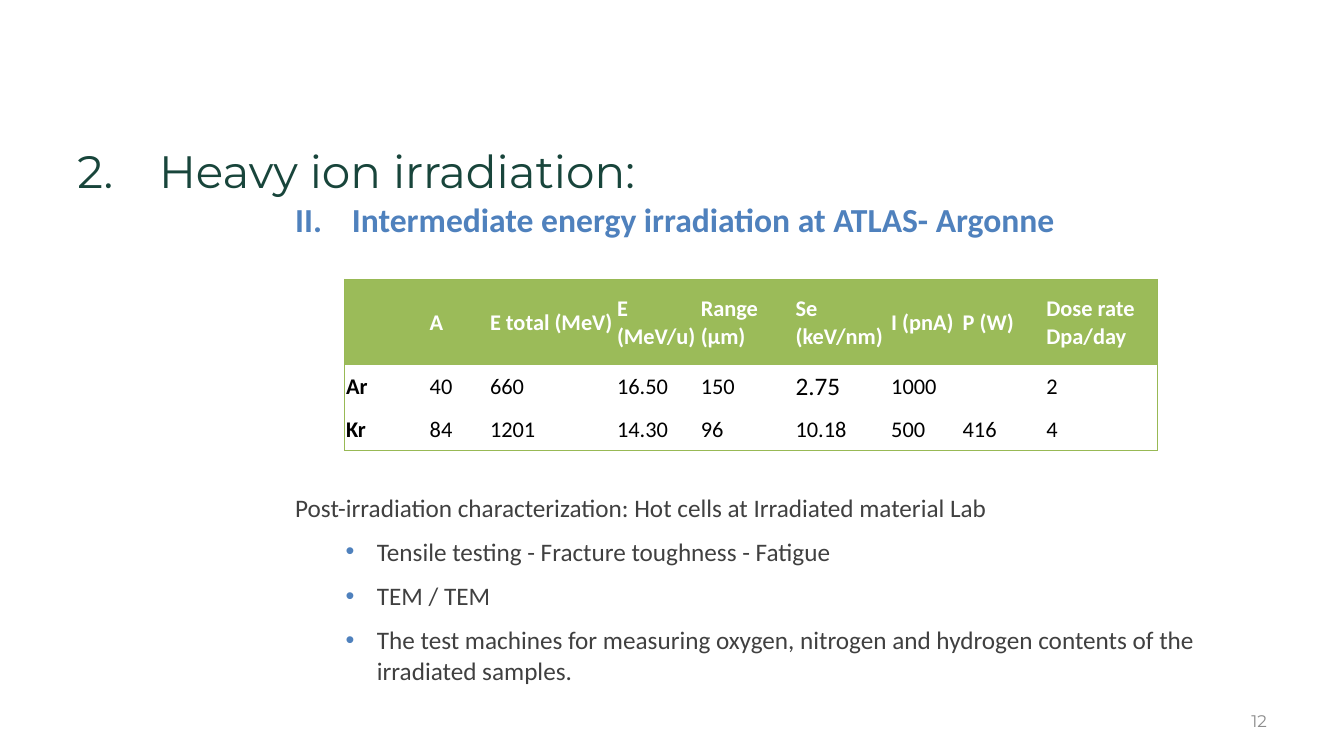
from lxml import etree
from pptx import Presentation
from pptx.dml.color import RGBColor
from pptx.enum.text import MSO_ANCHOR as Anchor, PP_ALIGN as Align
from pptx.oxml.ns import qn
from pptx.util import Cm, Pt

GREEN = RGBColor(0x9B, 0xBB, 0x59)
BORDER = RGBColor(0x98, 0xB9, 0x55)
PINE = RGBColor(0x18, 0x45, 0x3B)
BLUE = RGBColor(0x4F, 0x81, 0xBD)
CHARCOAL = RGBColor(0x40, 0x40, 0x40)
GREY = RGBColor(0x8C, 0x8C, 0x8C)
WHITE = RGBColor(0xFF, 0xFF, 0xFF)
BLACK = RGBColor(0, 0, 0)

COLUMN_WIDTHS = [2.11, 1.52, 3.2, 2.11, 2.39, 2.41, 1.8, 2.11, 2.84]
ROW_HEIGHTS = [2.16, 1.08, 1.08]
BEAMS = [
    ["", "A", "E total (MeV)", "E (MeV/u)", "Range (µm)", "Se (keV/nm)",
     "I (pnA)", "P (W)", "Dose rate\nDpa/day"],
    ["Ar", "40", "660", "16.50", "150", "2.75", "1000", "", "2"],
    ["Kr", "84", "1201", "14.30", "96", "10.18", "500", "416", "4"],
]
METHODS = [
    "Tensile testing - Fracture toughness - Fatigue",
    "TEM / TEM",
    "The test machines for measuring oxygen, nitrogen and hydrogen contents "
    "of the irradiated samples.",
]


def add_run(paragraph, text, size, color, font="Calibri", bold=False):
    run = paragraph.add_run()
    run.text = text
    run.font.name = font
    run.font.size = Pt(size)
    run.font.bold = bold
    run.font.color.rgb = color


def add_box(slide, left, top, width, height, wrap=True, anchor=Anchor.TOP):
    frame = slide.shapes.add_textbox(Cm(left), Cm(top), Cm(width), Cm(height)).text_frame
    frame.word_wrap = wrap
    frame.vertical_anchor = anchor
    return frame


def set_hanging(paragraph, indent):
    props = paragraph._p.get_or_add_pPr()
    props.set("marL", str(Cm(indent[0])))
    props.set("indent", str(-Cm(indent[1])))
    return props


def add_number(paragraph, scheme, start, indent):
    props = set_hanging(paragraph, (indent, indent))
    etree.SubElement(props, qn("a:buFont"), typeface="+mj-lt")
    etree.SubElement(props, qn("a:buAutoNum"), type=scheme, startAt=str(start))


def add_bullet(paragraph, color):
    props = set_hanging(paragraph, (2.06, 0.79))
    bullet_color = etree.SubElement(props, qn("a:buClr"))
    etree.SubElement(bullet_color, qn("a:srgbClr"), val=str(color))
    etree.SubElement(props, qn("a:buFont"), typeface="Arial")
    etree.SubElement(props, qn("a:buChar"), char="•")


def set_borders(cell, edges):
    props = cell._tc.get_or_add_tcPr()
    for side in "LRTB":
        line = etree.SubElement(props, qn(f"a:ln{side}"), w=str(Pt(0.75)))
        if side in edges:
            fill = etree.SubElement(line, qn("a:solidFill"))
            etree.SubElement(fill, qn("a:srgbClr"), val=str(BORDER))
        else:
            etree.SubElement(line, qn("a:noFill"))


def fill_cell(cell, text, row, col):
    # Only the outer edges of the table are ruled
    edges = {"L": col == 0, "R": col == len(COLUMN_WIDTHS) - 1,
             "T": row == 0, "B": row == len(ROW_HEIGHTS) - 1}
    set_borders(cell, [side for side, outer in edges.items() if outer])
    header = row == 0
    if header:
        cell.fill.solid()
        cell.fill.fore_color.rgb = GREEN
    else:
        cell.fill.background()
    cell.vertical_anchor = Anchor.MIDDLE
    cell.margin_left = cell.margin_right = cell.margin_top = Cm(0.03)
    cell.margin_bottom = 0
    frame = cell.text_frame
    for number, line in enumerate(text.split("\n")):
        paragraph = frame.add_paragraph() if number else frame.paragraphs[0]
        if line:
            add_run(paragraph, line, 18 if line == "2.75" else 16,
                    WHITE if header else BLACK, bold=header or col == 0)


def add_beam_table(slide):
    table = slide.shapes.add_table(
        len(BEAMS), len(COLUMN_WIDTHS), Cm(8.69), Cm(7.04),
        Cm(sum(COLUMN_WIDTHS)), Cm(sum(ROW_HEIGHTS))).table
    table.horz_banding = False
    for column, width in zip(table.columns, COLUMN_WIDTHS):
        column.width = Cm(width)
    for row, height in zip(table.rows, ROW_HEIGHTS):
        row.height = Cm(height)
    for row, values in enumerate(BEAMS):
        for col, text in enumerate(values):
            fill_cell(table.cell(row, col), text, row, col)


def add_characterization(slide):
    frame = add_box(slide, 7.19, 12.27, 24.77, 5.23)
    add_run(frame.paragraphs[0], "Post-irradiation characterization: "
            "Hot cells at Irradiated material Lab", 18, CHARCOAL)
    for method in METHODS:
        paragraph = frame.add_paragraph()
        paragraph.level = 1
        paragraph.space_before = Pt(10)
        add_bullet(paragraph, BLUE)
        add_run(paragraph, method, 18, CHARCOAL)


def main():
    deck = Presentation()
    deck.slide_width, deck.slide_height = Cm(33.87), Cm(19.05)
    slide = deck.slides.add_slide(deck.slide_layouts[6])

    # Headings
    title = add_box(slide, 1.7, 3.48, 30.48, 1.35).paragraphs[0]
    add_number(title, "arabicPeriod", 2, 2.06)
    add_run(title, "Heavy ion irradiation:", 32.4, PINE, "Montserrat")
    subtitle = add_box(slide, 7.19, 4.9, 23.04, 1.27).paragraphs[0]
    add_number(subtitle, "romanUcPeriod", 2, 1.43)
    add_run(subtitle, "Intermediate energy irradiation at ATLAS- Argonne",
            24, BLUE, bold=True)

    # Beam parameters and follow-up tests
    add_beam_table(slide)
    add_characterization(slide)

    # Page number
    page = add_box(slide, 24.28, 17.65, 7.9, 1.02, anchor=Anchor.MIDDLE).paragraphs[0]
    page.alignment = Align.RIGHT
    add_run(page, "12", 12, GREY, "Montserrat")

    deck.save("out.pptx")


if __name__ == "__main__":
    main()
